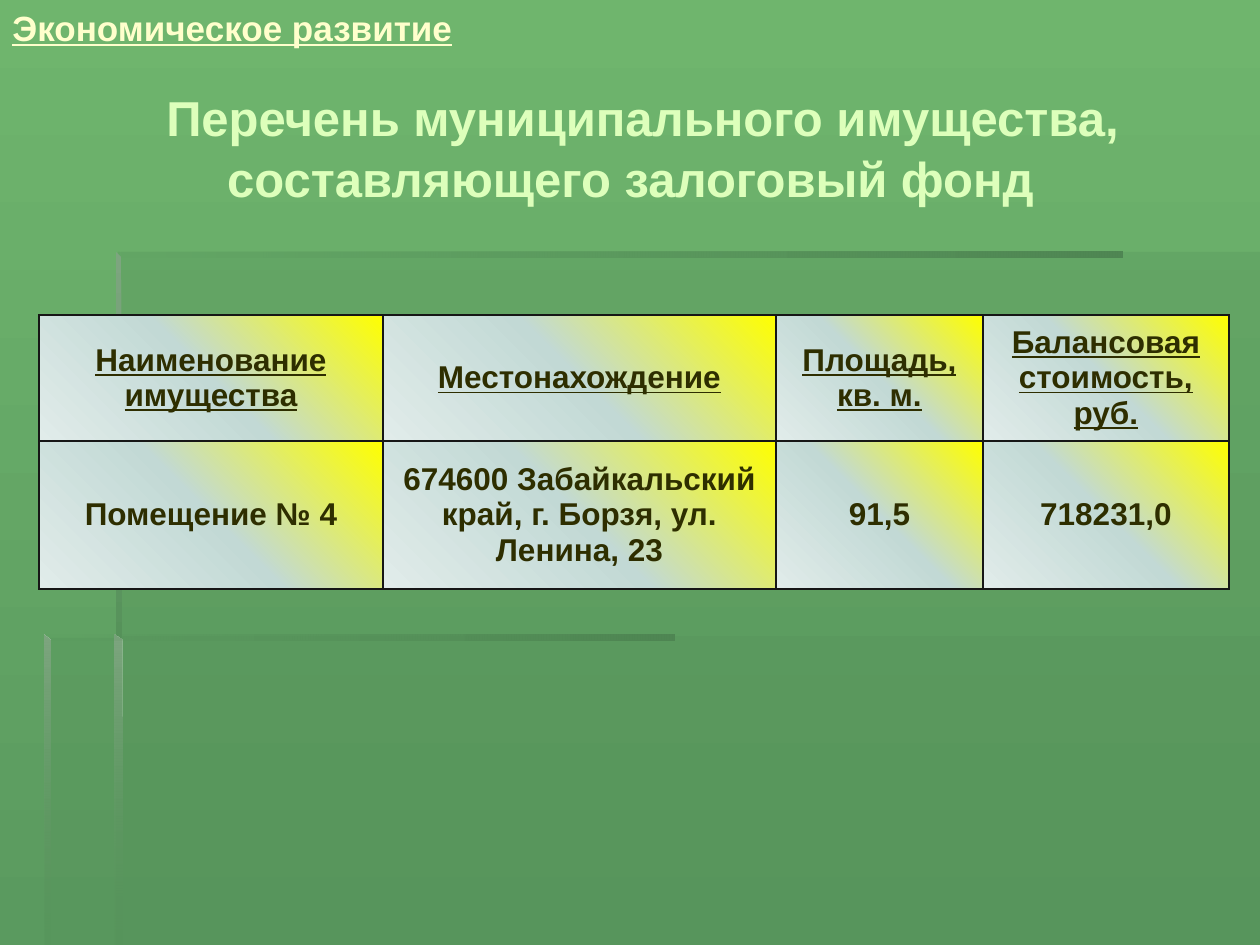
from lxml.etree import SubElement
from pptx import Presentation
from pptx.dml.color import RGBColor
from pptx.enum.text import MSO_ANCHOR, MSO_AUTO_SIZE, PP_ALIGN
from pptx.oxml.ns import qn
from pptx.util import Pt

# Content
HEADER = "Экономическое развитие"
TITLE = "Перечень муниципального имущества, составляющего залоговый фонд"
ROWS = [
    ("Наименование имущества", "Местонахождение", "Площадь, кв. м.",
     "Балансовая стоимость, руб."),
    ("Помещение № 4", "674600 Забайкальский край, г. Борзя, ул. Ленина, 23",
     "91,5", "718231,0"),
]
COL_W = (344, 393, 207, 246)
ROW_H = (126, 148)
FONT = "Arial"
C = {"bg_top": "6FB56D", "bg_end": "5A9A5F", "panel": "56925A",
     "bar": "4F8653", "edge": "7DA57F", "header": "FFFFCC",
     "title": "DDFFBB", "cell": "2E2E00", "border": "161616",
     "yellow": "FFFF00", "mist": "C2D9D5", "pale": "E1ECEA"}

# Fills: (stops, angle); a stop is (position, colour, opacity)
PANEL = ([(0, "panel", 30), (100, "panel", 30)], 0)
BAR = ([(0, "panel", 0), (100, "bar", 100)], 0)
EDGE = ([(0, "edge", 100), (100, "panel", 100)], 90)
EDGE_FADE = ([(0, "edge", 100), (100, "panel", 0)], 90)
EDGE_FAINT = ([(0, "edge", 100), (100, "panel", 10)], 90)
CELL = ([(0, "yellow", 100), (50, "mist", 100), (100, "pale", 100)], 135)
BACK = ([(0, "bg_top", 100), (100, "bg_end", 100)], 90)

# Template decoration, outlines in px
DECOR = [
    ([(116, 636), (116, 945), (1260, 945), (1260, 636)], PANEL),
    ([(118, 638), (45, 638), (45, 945), (1260, 945), (1260, 252), (118, 252)], PANEL),
    ([(116, 252), (116, 258), (1123, 258), (1123, 252)], BAR),
    ([(116, 252), (116, 643), (122, 643), (121, 257)], EDGE),
    ([(115, 945), (122, 945), (121, 640), (115, 635)], EDGE_FADE),
    ([(44, 635), (44, 641), (674, 641), (674, 635)], BAR),
    ([(44, 635), (44, 945), (50, 945), (50, 641)], EDGE_FAINT),
]


def px(n):
    return round(n * 914400 / 126)


def rgb(name):
    return RGBColor.from_string(C[name])


def paint(fill, element, stops, angle):
    """Fill an object with a gradient that may be see-through."""
    fill.solid()
    solid = element.find(".//" + qn("a:solidFill"))
    grad = solid.makeelement(qn("a:gradFill"), {"rotWithShape": "1"})
    gs_list = SubElement(grad, qn("a:gsLst"))
    for pos, color, opacity in stops:
        gs = SubElement(gs_list, qn("a:gs"), pos=str(pos * 1000))
        clr = SubElement(gs, qn("a:srgbClr"), val=C[color])
        if opacity < 100:
            SubElement(clr, qn("a:alpha"), val=str(opacity * 1000))
    SubElement(grad, qn("a:lin"), ang=str(angle * 60000), scaled="0")
    solid.getparent().replace(solid, grad)


def write(tf, text, size, color, underline=False, align=PP_ALIGN.CENTER):
    tf.word_wrap = True
    p = tf.paragraphs[0]
    p.alignment = align
    r = p.add_run()
    r.text = text
    f = r.font
    f.name, f.size, f.bold, f.underline = FONT, Pt(size), True, underline
    f.color.rgb = rgb(color)
    return p


def add_borders(tcPr):
    for i, side in enumerate(("lnL", "lnR", "lnT", "lnB")):
        ln = tcPr.makeelement(qn("a:" + side), {"w": str(Pt(1))})
        fill = SubElement(ln, qn("a:solidFill"))
        SubElement(fill, qn("a:srgbClr"), val=C["border"])
        tcPr.insert(i, ln)


prs = Presentation()
prs.slide_width, prs.slide_height = px(1260), px(945)
s = prs.slides.add_slide(prs.slide_layouts[5])

# Background and decoration
bg_fill = s.background.fill
bg_fill.solid()
paint(bg_fill, s._element.find(".//" + qn("p:bgPr")), *BACK)
for points, look in DECOR:
    start, *rest = [(px(x), px(y)) for x, y in points]
    builder = s.shapes.build_freeform(*start)
    builder.add_line_segments(rest, close=True)
    sp = builder.convert_to_shape()
    sp.shadow.inherit = False
    sp.line.fill.background()
    paint(sp.fill, sp._element.spPr, *look)

# Section header
box = s.shapes.add_textbox(0, 0, px(600), px(54))
write(box.text_frame, HEADER, 20, "header", True, PP_ALIGN.LEFT)

# Title, brought in front of the decoration
title = s.shapes.title
s.shapes._spTree.append(title._element)
title.left, title.top, title.width, title.height = px(88), px(78), px(1085), px(131)
tf = title.text_frame
tf.auto_size = MSO_AUTO_SIZE.SHAPE_TO_FIT_TEXT
tf.vertical_anchor = MSO_ANCHOR.TOP
p = write(tf, TITLE, 28, "title")
p.line_spacing = 1.05
p._p.get_or_add_pPr().set("indent", str(px(24)))

# Property table
table = s.shapes.add_table(len(ROWS), len(COL_W), px(39), px(315),
                           px(sum(COL_W)), px(sum(ROW_H))).table
for col, width in zip(table.columns, COL_W):
    col.width = px(width)
for i, (texts, height) in enumerate(zip(ROWS, ROW_H)):
    table.rows[i].height = px(height)
    for j, text in enumerate(texts):
        cell = table.cell(i, j)
        cell.vertical_anchor = MSO_ANCHOR.MIDDLE
        write(cell.text_frame, text, 18, "cell", underline=i == 0)
        tcPr = cell._tc.get_or_add_tcPr()
        paint(cell.fill, tcPr, *CELL)
        add_borders(tcPr)

prs.save("out.pptx")
